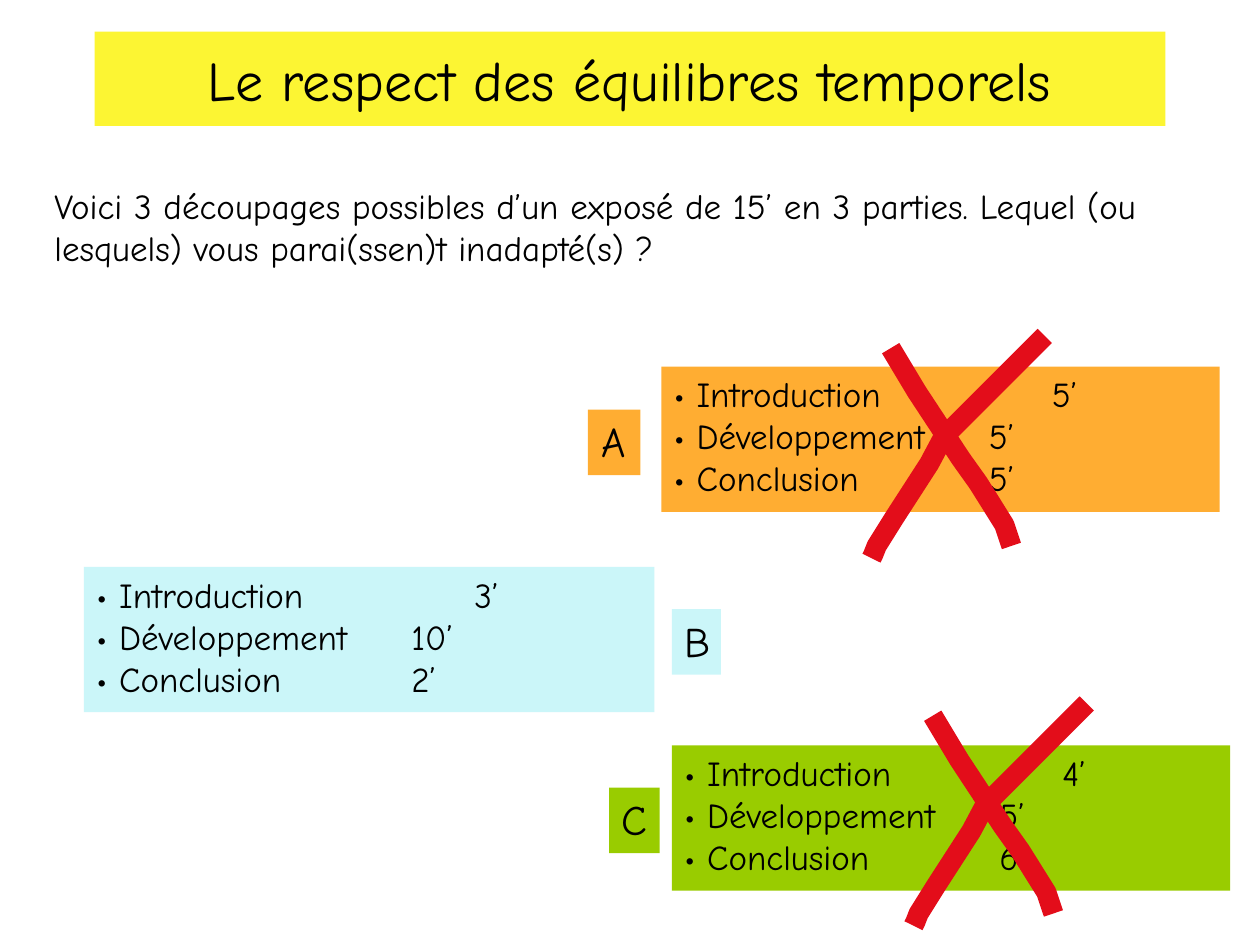
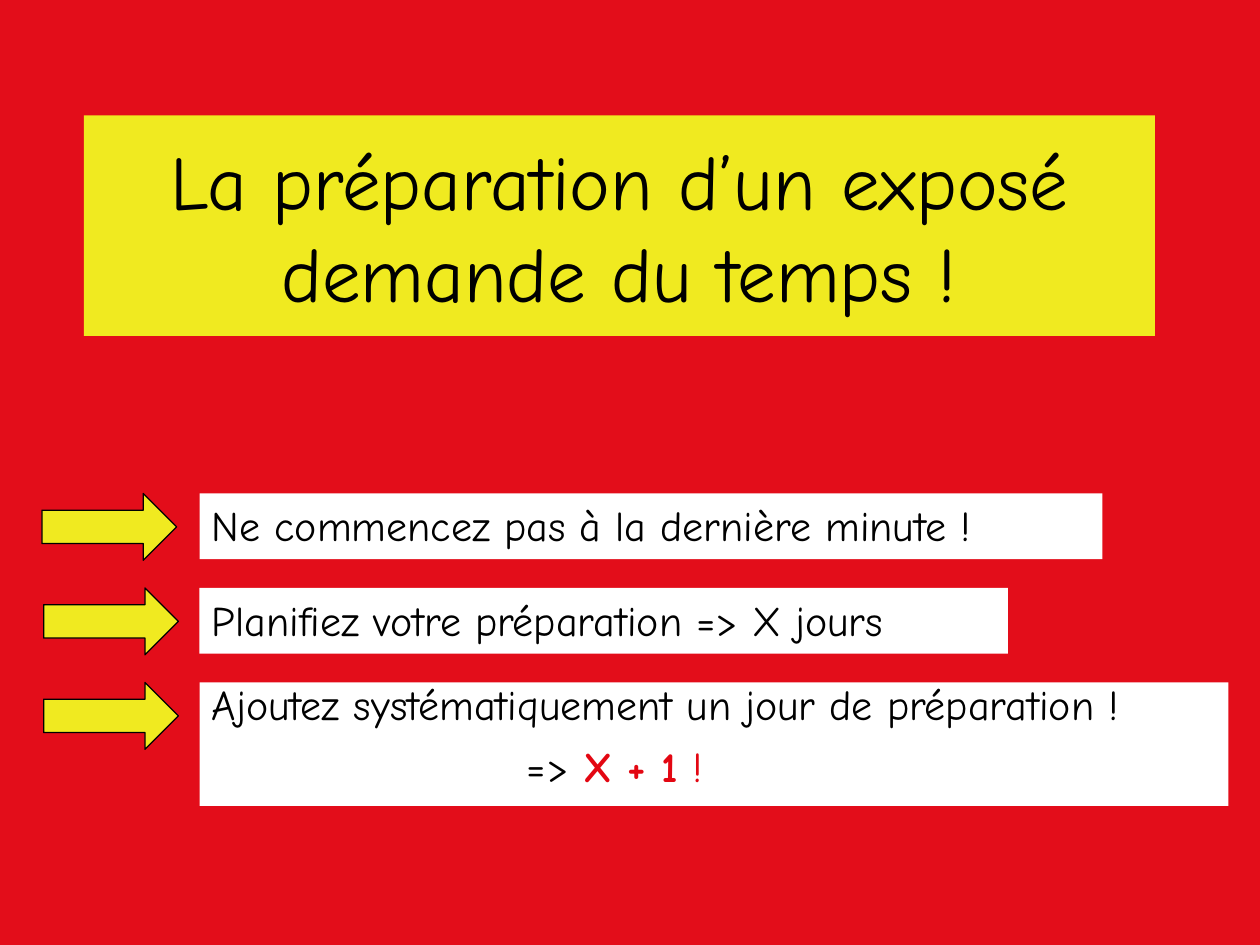
"""Build two slides on timing a talk and preparing it."""
from pptx import Presentation
from pptx import util as u
from pptx.dml.color import RGBColor
from pptx.enum import shapes, text

FONT = "Comic Neue"
BLACK, WHITE, RED, ACCENT = "000000", "FFFFFF", "E30D1A", "E30712"
LEMON, YELLOW = "FCF533", "F0EA20"
ORANGE, SKY, GREEN = "FFAD32", "CBF6F9", "99CC00"
CROSS = (
    ((99, 0), (41, 58), (33, 73), (13, 104), (3, 120), (1, 125), (0, 127)),
    ((11, 7), (26, 32), (51, 70), (61, 84), (66, 92), (76, 108), (79, 117), (80, 120)),
)


def rgb(value):
    return RGBColor.from_string(value)


def add_run(p, content, size=24, color=BLACK, bold=False):
    r = p.add_run()
    r.text = content
    r.font.name, r.font.size, r.font.bold = FONT, u.Pt(size), bold
    r.font.color.rgb = rgb(color)


def fill(sp, color):
    sp.fill.solid()
    sp.fill.fore_color.rgb = rgb(color)


class Deck:
    def __init__(self):
        self.prs = Presentation()
        self.prs.slide_width, self.prs.slide_height = u.Pt(720), u.Pt(540)
        self.s = None

    def slide(self, background):
        self.s = self.prs.slides.add_slide(self.prs.slide_layouts[5])
        fill(self.s.background, background)

    def title(self, content, x, y, h, size, color):
        sp = self.s.shapes.title
        sp.left, sp.top, sp.width, sp.height = map(u.Pt, (x, y, 612, h))
        fill(sp, color)
        tf = sp.text_frame
        tf.word_wrap, tf.auto_size = True, text.MSO_AUTO_SIZE.NONE
        tf.vertical_anchor = text.MSO_ANCHOR.MIDDLE
        p = tf.paragraphs[0]
        p.alignment = text.PP_ALIGN.CENTER
        add_run(p, content, size)

    def box(self, lines, x, y, w, h, color=None, size=24, wrap=True,
            align=text.PP_ALIGN.LEFT, spacing=None, gap=0):
        sp = self.s.shapes.add_textbox(*map(u.Pt, (x, y, w, h)))
        if color:
            fill(sp, color)
        tf = sp.text_frame
        tf.word_wrap, tf.auto_size = wrap, text.MSO_AUTO_SIZE.SHAPE_TO_FIT_TEXT
        for i, runs in enumerate(lines):
            p = tf.add_paragraph() if i else tf.paragraphs[0]
            p.alignment, p.line_spacing = align, spacing
            p.space_before = u.Pt(gap if i else 0)
            for content, style in runs:
                add_run(p, content, **{"size": size, **style})

    def plan(self, letter, times, color, x, y, w, letter_x, letter_y, letter_w):
        parts = zip(("Introduction\t\t\t", "Développement\t\t", "Conclusion\t\t\t"), times)
        lines = [[(f"• {part}{time}’", {})] for part, time in parts]
        self.box(lines, x, y, w, 83, color, size=20, wrap=False)
        self.box([[(letter, {})]], letter_x, letter_y, letter_w, 37.5, color,
                 wrap=False, align=text.PP_ALIGN.CENTER)

    def cross(self, x, y):
        group = self.s.shapes.add_group_shape()
        for stroke in CROSS:
            points = [(u.Pt(x + dx), u.Pt(y + dy)) for dx, dy in stroke]
            builder = group.shapes.build_freeform(*points[0])
            builder.add_line_segments(points[1:], close=False)
            sp = builder.convert_to_shape()
            sp.shadow.inherit = False
            sp.fill.background()
            sp.line.color.rgb, sp.line.width = rgb(RED), u.Pt(11.5)

    def arrow(self, x, y):
        sp = self.s.shapes.add_shape(
            shapes.MSO_SHAPE.RIGHT_ARROW, *map(u.Pt, (x, y, 77, 38.2)))
        sp.shadow.inherit = False
        fill(sp, YELLOW)
        sp.line.color.rgb, sp.line.width = rgb(BLACK), u.Pt(0.75)


def main():
    deck = Deck()
    deck.slide(WHITE)
    deck.title("Le respect des équilibres temporels", 54, 18, 54, 32, LEMON)
    question = ("Voici 3 découpages possibles d’un exposé de 15’ en 3 parties. "
                "Lequel (ou lesquels) vous parai(ssen)t inadapté(s) ?")
    deck.box([[(question, {})]], 24, 102, 665, 57.5, size=20)
    deck.plan("A", (5, 5, 5), ORANGE, 378, 209.5, 319, 336, 234, 30)
    deck.plan("B", (3, 10, 2), SKY, 48, 324, 326, 384, 348, 28)
    deck.plan("C", (4, 5, 6), GREEN, 384, 426, 319, 348, 450, 29)
    deck.cross(498, 192)
    deck.cross(522, 402)

    deck.slide(RED)
    deck.title("La préparation d’un exposé demande du temps !", 48, 66, 126, 44, YELLOW)
    tips = (
        ([[("Ne commencez pas à la dernière minute !", {})]], 24, 516, 37.5, None),
        ([[("Planifiez votre préparation => X jours", {})]], 25, 462, 37.5, None),
        ([[("Ajoutez systématiquement un jour de préparation !", {})],
          [("\t\t\t\t\t=> ", {}), ("X + 1 ", {"color": ACCENT, "bold": True}),
           ("!", {"color": ACCENT})]], 25, 588, 70.5, 0.8),
    )
    for i, (lines, arrow_x, w, h, spacing) in enumerate(tips):
        y = 282 + 54 * i
        deck.box(lines, 114, y, w, h, WHITE, spacing=spacing, gap=12)
        deck.arrow(arrow_x, y)
    deck.prs.save("out.pptx")


if __name__ == "__main__":
    main()
